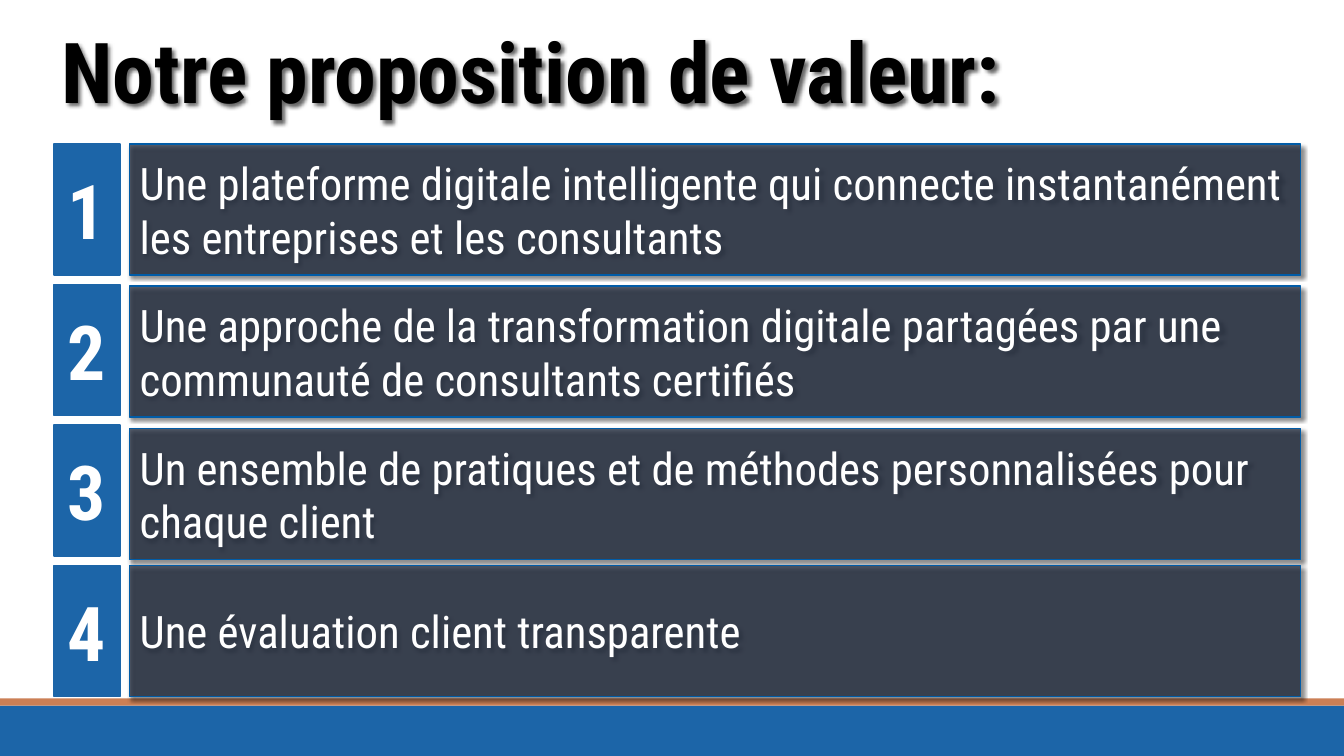
from dataclasses import dataclass

from lxml import etree
from pptx import Presentation
from pptx import util as u
from pptx.dml.color import RGBColor
from pptx.enum import shapes, text
from pptx.oxml import ns


@dataclass(frozen=True)
class Theme:
    font: str = "Roboto Condensed"
    blue: str = "1C65A8"
    edge: str = "015CA7"
    navy: str = "121D31"
    rust: str = "CB7F55"
    white: str = "FFFFFF"
    black: str = "000000"
    title: int = 60
    number: int = 54
    body: int = 32


THEME = Theme()
WIDE, HIGH = 33.87, 19.05
POINTS = (
    "Une plateforme digitale intelligente qui connecte instantanément les entreprises et les consultants",
    "Une approche de la transformation digitale partagées par une communauté de consultants certifiés",
    "Un ensemble de pratiques et de méthodes personnalisées pour chaque client",
    "Une évaluation client transparente",
)
# Card offsets from the top of the list; the last one sits a little closer
DROPS = (0, 3.58, 7.17, 10.62)


def put(item, values):
    for name, value in values.items():
        setattr(item, name, value)


def add_xml(parent, tag, **values):
    node = etree.SubElement(parent, ns.qn(tag))
    for name, value in values.items():
        node.set(name, str(value))
    return node


def add_shade(shape):
    """Soft shadow to the lower right."""
    shape.shadow.inherit = False
    effects = shape.element.spPr.find(ns.qn("a:effectLst"))
    shade = add_xml(effects, "a:outerShdw", blurRad=u.Pt(3), dist=u.Pt(2),
                    dir=45 * 60000, algn="tl", rotWithShape=0)
    tint = add_xml(shade, "a:srgbClr", val=THEME.black)
    add_xml(tint, "a:alpha", val=60000)


def add_box(slide, box, fill, edge=None, weight=1):
    left, top, width, height = map(u.Cm, box)
    shape = slide.shapes.add_shape(
        shapes.MSO_SHAPE.RECTANGLE, left, top, width, height)
    shape.shadow.inherit = False
    shape.fill.solid()
    shape.fill.fore_color.rgb = RGBColor.from_string(fill)
    if edge:
        shape.line.color.rgb = RGBColor.from_string(edge)
        shape.line.width = u.Pt(weight)
    else:
        shape.line.fill.background()
    return shape


def write(shape, words, size, color, bold=False, align=text.PP_ALIGN.LEFT,
          anchor=text.MSO_ANCHOR.MIDDLE):
    frame = shape.text_frame
    put(frame, {"word_wrap": True, "vertical_anchor": anchor})
    para = frame.paragraphs[0]
    para.alignment = align
    run = para.add_run()
    run.text = words
    put(run.font, {"name": THEME.font, "size": u.Pt(size), "bold": bold})
    run.font.color.rgb = RGBColor.from_string(color)
    return para


def add_foot(slide, box):
    """Blue band with a thin rust strip along its top."""
    left, top, width, height = box
    strip = 0.18
    add_box(slide, (left, top + strip, width, height - strip), THEME.blue)
    add_box(slide, (left, top, width, strip), THEME.rust)


def add_title(slide, box, words):
    shape = slide.shapes.add_textbox(*map(u.Cm, box))
    para = write(shape, words, THEME.title, THEME.black, bold=True,
                 anchor=text.MSO_ANCHOR.TOP)
    shape.text_frame.auto_size = text.MSO_AUTO_SIZE.SHAPE_TO_FIT_TEXT
    props = para._p.get_or_add_pPr()
    props.set("marL", str(u.Cm(0.5)))
    props.set("indent", "0")
    add_shade(shape)


def add_card(slide, box, words):
    shape = add_box(slide, box, THEME.navy, THEME.edge)
    tint = shape.element.spPr.find(ns.qn("a:solidFill"))[0]
    add_xml(tint, "a:alpha", val=70000)
    add_shade(shape)
    write(shape, words, THEME.body, THEME.white)


def add_badge(slide, box, number):
    shape = add_box(slide, box, THEME.blue, THEME.blue, 1.25)
    write(shape, str(number), THEME.number, THEME.white, bold=True,
          align=text.PP_ALIGN.CENTER)


def add_list(slide, box):
    """Numbered badges on an even pitch, each with its card."""
    left, top, width, height = box
    tall, badge, gap = 3.3, 1.65, 0.25
    step = (height - tall) / (len(POINTS) - 1)
    shift = badge + gap
    for i, (words, drop) in enumerate(zip(POINTS, DROPS)):
        add_card(slide, (left + shift, top + drop, width - shift, tall), words)
        add_badge(slide, (left, top + i * step, badge, tall), i + 1)


def main():
    deck = Presentation()
    put(deck, {"slide_width": u.Cm(WIDE), "slide_height": u.Cm(HIGH)})
    slide = deck.slides.add_slide(deck.slide_layouts[6])
    add_foot(slide, (0, 17.6, WIDE, HIGH - 17.6))
    add_title(slide, (0.79, 0.36, 29.85, 2.82), "Notre proposition de valeur:")
    add_list(slide, (1.37, 3.63, 31.4, 13.92))
    deck.save("out.pptx")


if __name__ == "__main__":
    main()
